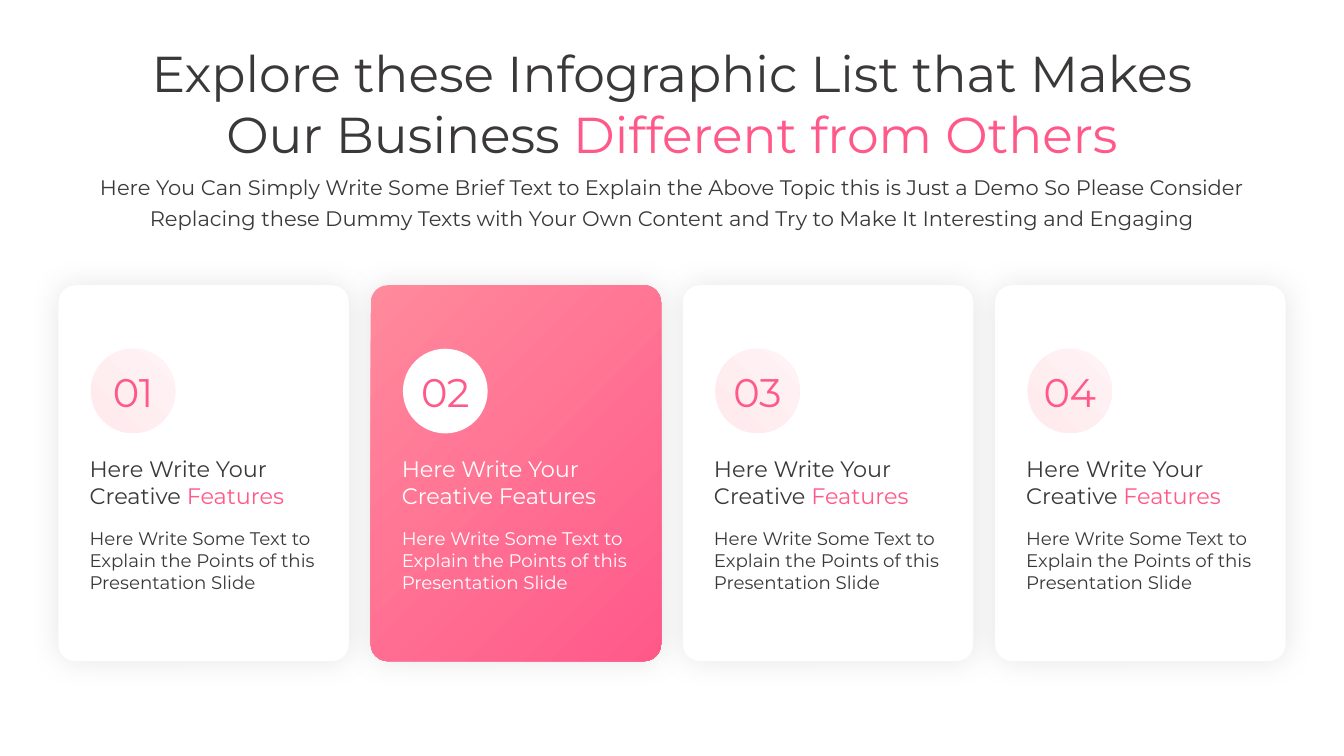
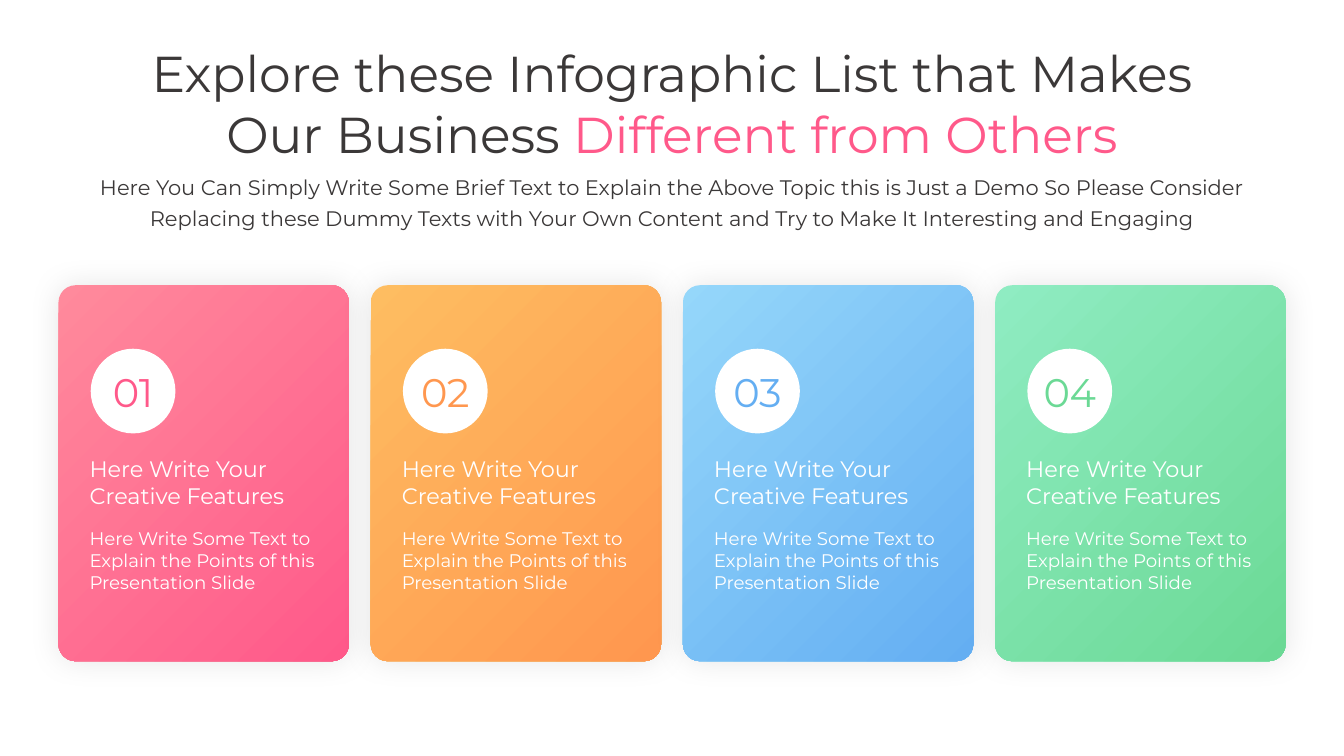
from lxml.etree import SubElement
from pptx import Presentation
from pptx.dml.color import RGBColor
from pptx.enum.shapes import MSO_SHAPE
from pptx.enum.text import MSO_ANCHOR, PP_ALIGN
from pptx.oxml.ns import qn
from pptx.util import Inches, Pt

FONT = "Montserrat"
WHITE = RGBColor(0xFF, 0xFF, 0xFF)
INK = RGBColor(0x3B, 0x38, 0x38)
# Each gradient runs from its strong colour to its light one.
PINK = (RGBColor(0xFF, 0x59, 0x8A), RGBColor(0xFF, 0x8A, 0x9C))
ORANGE = (RGBColor(0xFF, 0x97, 0x4F), RGBColor(0xFE, 0xBD, 0x61))
BLUE = (RGBColor(0x64, 0xAE, 0xF2), RGBColor(0x95, 0xD7, 0xFA))
GREEN = (RGBColor(0x6B, 0xD9, 0x95), RGBColor(0x8F, 0xEC, 0xC2))
BLUSH = (RGBColor(0xFF, 0xEB, 0xEE), RGBColor(0xFF, 0xF3, 0xF5))

# A line is a list of parts; the second part of a line is highlighted.
TITLE = [["Explore these Infographic List that Makes"],
         ["Our Business ", "Different from Others"]]
SUBTITLE = [
    ["Here You Can Simply Write Some Brief Text to Explain the Above Topic "
     "this is Just a Demo So Please Consider"],
    ["Replacing these Dummy Texts with Your Own Content and Try to Make It "
     "Interesting and Engaging"],
]
HEADING = [["Here Write Your"], ["Creative ", "Features"]]
DETAIL = [["Here Write Some Text to"], ["Explain the Points of this"],
          ["Presentation Slide"]]
# One row per slide, one gradient per card; None is a plain white card.
SLIDES = [
    [None, PINK, None, None],
    [PINK, ORANGE, BLUE, GREEN],
]

SLIDE_WIDTH, SLIDE_HEIGHT = 13.33, 7.5
MARGIN = 0.58
CARD_TOP, CARD_WIDTH, CARD_HEIGHT = 2.83, 2.88, 3.73
CARD_CORNER = 0.059
BADGE_INSET, BADGE_TOP, BADGE_SIZE = 0.32, 3.46, 0.84
TEXT_INSET, TEXT_WIDTH = 0.21, 2.6
HEADING_TOP, DETAIL_TOP = 4.47, 5.18


def inches(*lengths):
    return [Inches(length) for length in lengths]


def write(shape, lines, size, color, highlight, align=PP_ALIGN.LEFT, spacing=1.0):
    frame = shape.text_frame
    frame.word_wrap = True
    frame.vertical_anchor = MSO_ANCHOR.TOP
    for index, parts in enumerate(lines):
        para = frame.add_paragraph() if index else frame.paragraphs[0]
        para.alignment = align
        para.line_spacing = spacing
        for part, part_color in zip(parts, (color, highlight)):
            span = para.add_run()
            span.text = part
            span.font.name = FONT
            span.font.size = Pt(size)
            span.font.color.rgb = part_color


def add_text(slide, place, lines, size, color, highlight, **style):
    box = slide.shapes.add_textbox(*inches(*place))
    write(box, lines, size, color, highlight, **style)


def fill_gradient(shape, colors, first_stop=0.0, angle=45):
    shape.fill.gradient()
    shape.fill.gradient_angle = angle
    stops = shape.fill.gradient_stops
    for stop, color, position in zip(stops, colors, (first_stop, 1.0)):
        stop.color.rgb = color
        stop.position = position


def spread_from_corner(shape):
    """Turn the linear gradient into a circular one from the lower right."""
    gradient = shape._element.spPr.find(qn("a:gradFill"))
    gradient.remove(gradient.find(qn("a:lin")))
    circle = SubElement(gradient, qn("a:path"), path="circle")
    SubElement(circle, qn("a:fillToRect"), l="100000", t="100000")


def add_glow(shape):
    """Give the shape a soft, even shadow on all sides."""
    effects = shape._element.spPr.find(qn("a:effectLst"))
    shadow = SubElement(effects, qn("a:outerShdw"), blurRad=str(Pt(22)),
                        dist="0", dir="0", algn="ctr", rotWithShape="0")
    black = SubElement(shadow, qn("a:srgbClr"), val="000000")
    SubElement(black, qn("a:alpha"), val="10000")


def add_plain_shape(slide, kind, place):
    shape = slide.shapes.add_shape(kind, *inches(*place))
    shape.shadow.inherit = False
    shape.line.fill.background()
    shape.fill.solid()
    shape.fill.fore_color.rgb = WHITE
    return shape


def add_badge(slide, left, number, color, tinted):
    badge = add_plain_shape(slide, MSO_SHAPE.OVAL,
                            (left, BADGE_TOP, BADGE_SIZE, BADGE_SIZE))
    if tinted:
        fill_gradient(badge, BLUSH, first_stop=0.1)
    write(badge, [[f"{number:02}"]], 28.5, color, color, align=PP_ALIGN.CENTER)
    frame = badge.text_frame
    frame.word_wrap = False
    frame.vertical_anchor = MSO_ANCHOR.MIDDLE
    frame.margin_left = frame.margin_right = 0
    frame.margin_top = frame.margin_bottom = 0
    frame.paragraphs[0].runs[0]._r.get_or_add_rPr().set("spc", "-30")


def add_card(slide, left, number, colors):
    card = add_plain_shape(slide, MSO_SHAPE.ROUNDED_RECTANGLE,
                           (left, CARD_TOP, CARD_WIDTH, CARD_HEIGHT))
    card.adjustments[0] = CARD_CORNER
    add_glow(card)
    if colors:
        fill_gradient(card, colors)
        spread_from_corner(card)
    accent = (colors or PINK)[0]
    ink, highlight = (WHITE, WHITE) if colors else (INK, accent)
    add_badge(slide, left + BADGE_INSET, number, accent, tinted=not colors)
    text_left = left + TEXT_INSET
    add_text(slide, (text_left, HEADING_TOP, TEXT_WIDTH, 0.65),
             HEADING, 16, ink, highlight)
    add_text(slide, (text_left, DETAIL_TOP, TEXT_WIDTH, 0.76),
             DETAIL, 13, ink, highlight)


def add_header(slide):
    title = slide.shapes.title
    title.left, title.top, title.width, title.height = inches(0.94, 0.37, 11.45, 1.31)
    write(title, TITLE, 36, INK, PINK[0], align=PP_ALIGN.CENTER)
    add_text(slide, (0.68, 1.63, 11.97, 0.69), SUBTITLE, 15, INK, INK,
             align=PP_ALIGN.CENTER, spacing=Pt(22))


def main():
    deck = Presentation()
    deck.slide_width, deck.slide_height = inches(SLIDE_WIDTH, SLIDE_HEIGHT)
    title_only = deck.slide_layouts[5]
    for cards in SLIDES:
        slide = deck.slides.add_slide(title_only)
        add_header(slide)
        pitch = (SLIDE_WIDTH - 2 * MARGIN - CARD_WIDTH) / (len(cards) - 1)
        for index, colors in enumerate(cards):
            add_card(slide, MARGIN + index * pitch, index + 1, colors)
    deck.save("out.pptx")


if __name__ == "__main__":
    main()
